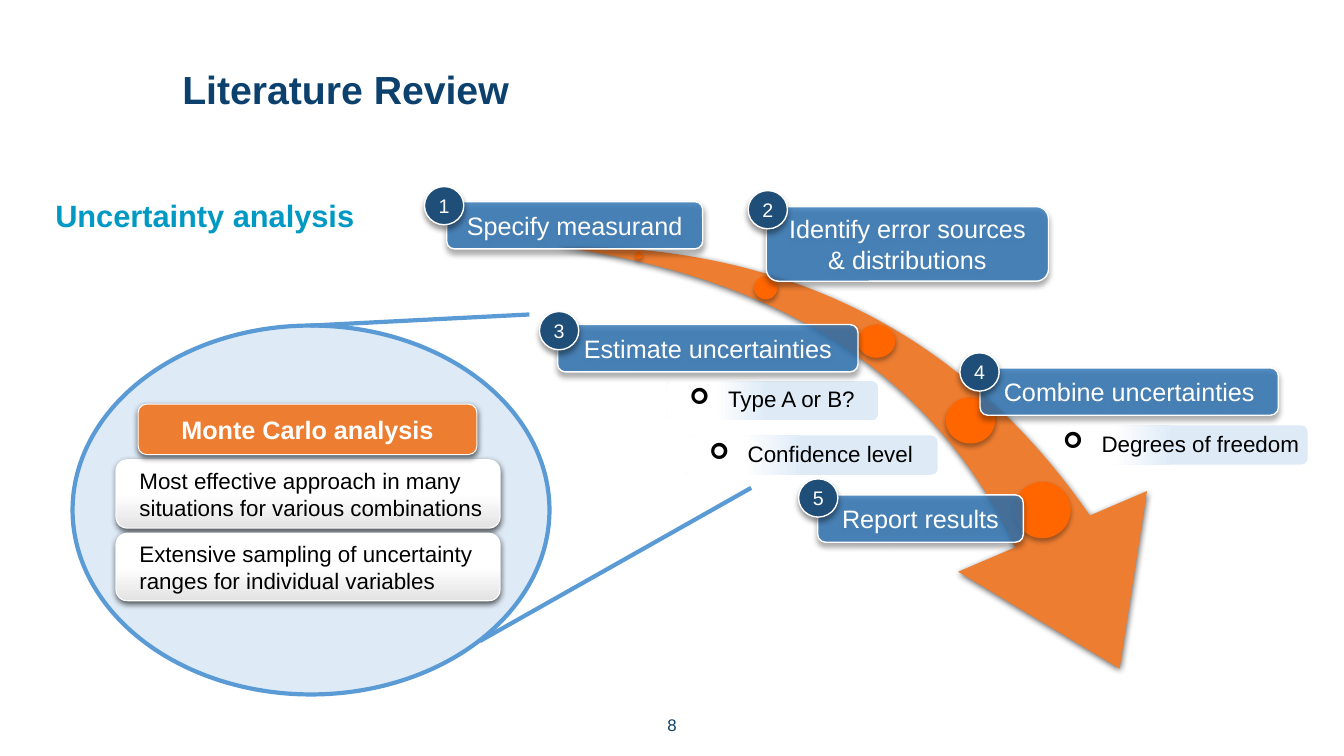
"""Builds the uncertainty analysis slide of a literature review."""
from lxml import etree
from pptx import Presentation
from pptx.dml.color import RGBColor
from pptx.enum.shapes import MSO_CONNECTOR, MSO_SHAPE
from pptx.enum.text import MSO_ANCHOR, PP_ALIGN
from pptx.oxml.ns import qn
from pptx.util import Inches, Pt

ROUND, OVAL, SWOOSH = MSO_SHAPE.ROUNDED_RECTANGLE, MSO_SHAPE.OVAL, MSO_SHAPE.SWOOSH_ARROW
STRAIGHT = MSO_CONNECTOR.STRAIGHT
MIDDLE = MSO_ANCHOR.MIDDLE
LEFT, CENTER = PP_ALIGN.LEFT, PP_ALIGN.CENTER

WHITE = RGBColor(0xFF, 0xFF, 0xFF)
BLACK = RGBColor(0, 0, 0)
NAVY = RGBColor(0x0C, 0x40, 0x6D)
TEAL = RGBColor(0x00, 0x99, 0xC4)
ORANGE = RGBColor(0xED, 0x7D, 0x31)
DOT_ORANGE = RGBColor(0xFF, 0x66, 0x00)
STEP_BLUE = RGBColor(0x2E, 0x75, 0xB6)
BADGE_BLUE = RGBColor(0x1F, 0x4E, 0x79)
PALE_BLUE = RGBColor(0xDE, 0xEB, 0xF7)
LINE_BLUE = RGBColor(0x5B, 0x9B, 0xD5)
GREY = RGBColor(0xE3, 0xE3, 0xE3)

ARROW_SHADOW = (63, 4.5, 1.5)
DOT_SHADOW = (32, 3.5, 2.2)
STEP_SHADOW = (40, 4, 3)
DETAIL_FADE = (180, [(53, PALE_BLUE), (77, WHITE), (100, WHITE)])
NOTE_FADE = (90, [(0, WHITE), (50, WHITE), (100, GREY)])

STEPS = [
    ("Specify measurand", (4.43, 2, 2.54, 0.47), (4.21, 1.85)),
    ("Identify error sources & distributions", (7.6, 2.05, 2.8, 0.74), (7.42, 1.89)),
    ("Estimate uncertainties", (5.53, 3.22, 2.98, 0.47), (5.35, 3.09)),
    ("Combine uncertainties", (9.72, 3.65, 2.96, 0.47), (9.52, 3.5)),
    ("Report results", (8.11, 4.91, 2.04, 0.47), (7.92, 4.75)),
]
DOTS = [
    (6.3, 2.5, 0.07, 0.07),
    (7.48, 2.74, 0.23, 0.23),
    (8.51, 3.22, 0.37, 0.33),
    (9.38, 3.94, 0.49, 0.46),
    (10.06, 4.78, 0.56, 0.56),
]
DETAILS = [
    ("Type A or B?", (6.61, 3.78, 2.1, 0.39)),
    ("Confidence level", (6.79, 4.32, 2.51, 0.39)),
    ("Degrees of freedom", (10.46, 4.22, 2.51, 0.39)),
]
METHOD = ("Monte Carlo analysis", (1.37, 4.01, 3.36, 0.5))
NOTES = [
    ("Most effective approach in many situations for various combinations",
     (1.15, 4.56, 3.81, 0.68)),
    ("Extensive sampling of uncertainty ranges for individual variables",
     (1.15, 5.29, 3.81, 0.67)),
]
CALLOUT_LINES = [((3.08, 3.23), (5.25, 3.12)), ((4.76, 6.36), (7.45, 4.84))]


def add_xml(parent, tag, **attrs):
    """Append a DrawingML element."""
    return etree.SubElement(parent, qn(tag), {k: str(v) for k, v in attrs.items()})


def write(sp, text, size=18, color=WHITE, bold=False, align=CENTER,
          insets=(0.1, 0.05, 0.1, 0.05), spacing=None, bullet=None):
    """Put one formatted paragraph in a shape."""
    tf = sp.text_frame
    tf.word_wrap = True
    tf.vertical_anchor = MIDDLE
    (tf.margin_left, tf.margin_top,
     tf.margin_right, tf.margin_bottom) = map(Inches, insets)
    p = tf.paragraphs[0]
    p.alignment = align
    if spacing:
        p.line_spacing = spacing
    if bullet:
        pPr = p._p.get_or_add_pPr()
        pPr.set("marL", str(Inches(0.38)))
        pPr.set("indent", str(-Inches(0.38)))
        add_xml(pPr, "a:buFont", typeface="Wingdings")
        add_xml(pPr, "a:buChar", char=bullet)
    r = p.add_run()
    r.text = text
    r.font.name = "Arial"
    r.font.size = Pt(size)
    r.font.bold = bold
    r.font.color.rgb = color


def text_box(s, box, text, **fmt):
    """Add a plain text box."""
    write(s.shapes.add_textbox(*map(Inches, box)), text, **fmt)


def shape(s, kind, box, fill=None, fade=None, alpha=None, line=None, width=1, shadow=None):
    """Add a preset shape with its fill, outline and shadow."""
    sp = s.shapes.add_shape(kind, *map(Inches, box))
    spPr = sp._element.spPr
    if fade:
        angle, stops = fade
        sp.fill.gradient()
        grad = spPr.find(qn("a:gradFill"))
        for child in list(grad):
            grad.remove(child)
        gs_list = add_xml(grad, "a:gsLst")
        for position, color in stops:
            gs = add_xml(gs_list, "a:gs", pos=position * 1000)
            add_xml(gs, "a:srgbClr", val=color)
        add_xml(grad, "a:lin", ang=angle * 60000, scaled=0)
    else:
        sp.fill.solid()
        sp.fill.fore_color.rgb = fill
        if alpha:
            add_xml(spPr.find(qn("a:solidFill"))[0], "a:alpha", val=alpha * 1000)
    if line is None:
        sp.line.fill.background()
    else:
        sp.line.color.rgb = line
        sp.line.width = Pt(width)
    sp.shadow.inherit = False
    if shadow:
        opacity, blur, distance = shadow
        outer = add_xml(spPr.find(qn("a:effectLst")), "a:outerShdw", blurRad=Pt(blur),
                        dist=Pt(distance), dir=90 * 60000, rotWithShape=0)
        color = add_xml(outer, "a:srgbClr", val=BLACK)
        add_xml(color, "a:alpha", val=opacity * 1000)
    return sp


def main():
    prs = Presentation()
    prs.slide_width, prs.slide_height = Inches(13.33), Inches(7.5)
    s = prs.slides.add_slide(prs.slide_layouts[6])

    text_box(s, (6.39, 7.01, 0.55, 0.36), "8", size=12, color=NAVY)
    text_box(s, (1.71, 0.44, 11.18, 0.94), "Literature Review",
             size=28, color=NAVY, bold=True, align=LEFT, spacing=0.9)
    text_box(s, (0.45, 1.7, 12.44, 0.87), "Uncertainty analysis",
             size=22, color=TEAL, bold=True, align=LEFT)

    arrow = shape(s, SWOOSH, (5.88, 1.98, 5.61, 4.9), fill=ORANGE, shadow=ARROW_SHADOW)
    arrow.rotation = 73.3
    arrow.adjustments[0], arrow.adjustments[1] = 0.163, 0.314
    for box in DOTS:
        shape(s, OVAL, box, fill=DOT_ORANGE, shadow=DOT_SHADOW)

    for text, box in DETAILS:
        write(shape(s, ROUND, box, fade=DETAIL_FADE), text, size=16, color=BLACK,
              insets=(0.05,) * 4, spacing=0.9, bullet="➢")
    for number, (text, box, corner) in enumerate(STEPS, 1):
        write(shape(s, ROUND, box, fill=STEP_BLUE, alpha=80, line=WHITE,
                    shadow=STEP_SHADOW), text)
        write(shape(s, OVAL, (*corner, 0.39, 0.38), fill=BADGE_BLUE, line=WHITE,
                    shadow=STEP_SHADOW), str(number), size=14, insets=(0,) * 4)

    shape(s, OVAL, (0.72, 3.23, 4.73, 3.66), fill=PALE_BLUE, line=LINE_BLUE, width=3)
    for text, box in NOTES:
        write(shape(s, ROUND, box, fade=NOTE_FADE, line=WHITE, width=0.75,
                    shadow=ARROW_SHADOW), text, size=16, color=BLACK, align=LEFT,
              insets=(0.2, 0.04, 0.12, 0.04))
    text, box = METHOD
    write(shape(s, ROUND, box, fill=ORANGE, line=WHITE, width=0.75, shadow=ARROW_SHADOW),
          text, bold=True, insets=(0.36, 0.03, 0.36, 0.03))

    for start, end in CALLOUT_LINES:
        cx = s.shapes.add_connector(STRAIGHT, *map(Inches, start + end))
        cx.line.color.rgb = LINE_BLUE
        cx.line.width = Pt(3)
        add_xml(cx._element.spPr, "a:effectLst")

    prs.save("out.pptx")


if __name__ == "__main__":
    main()
